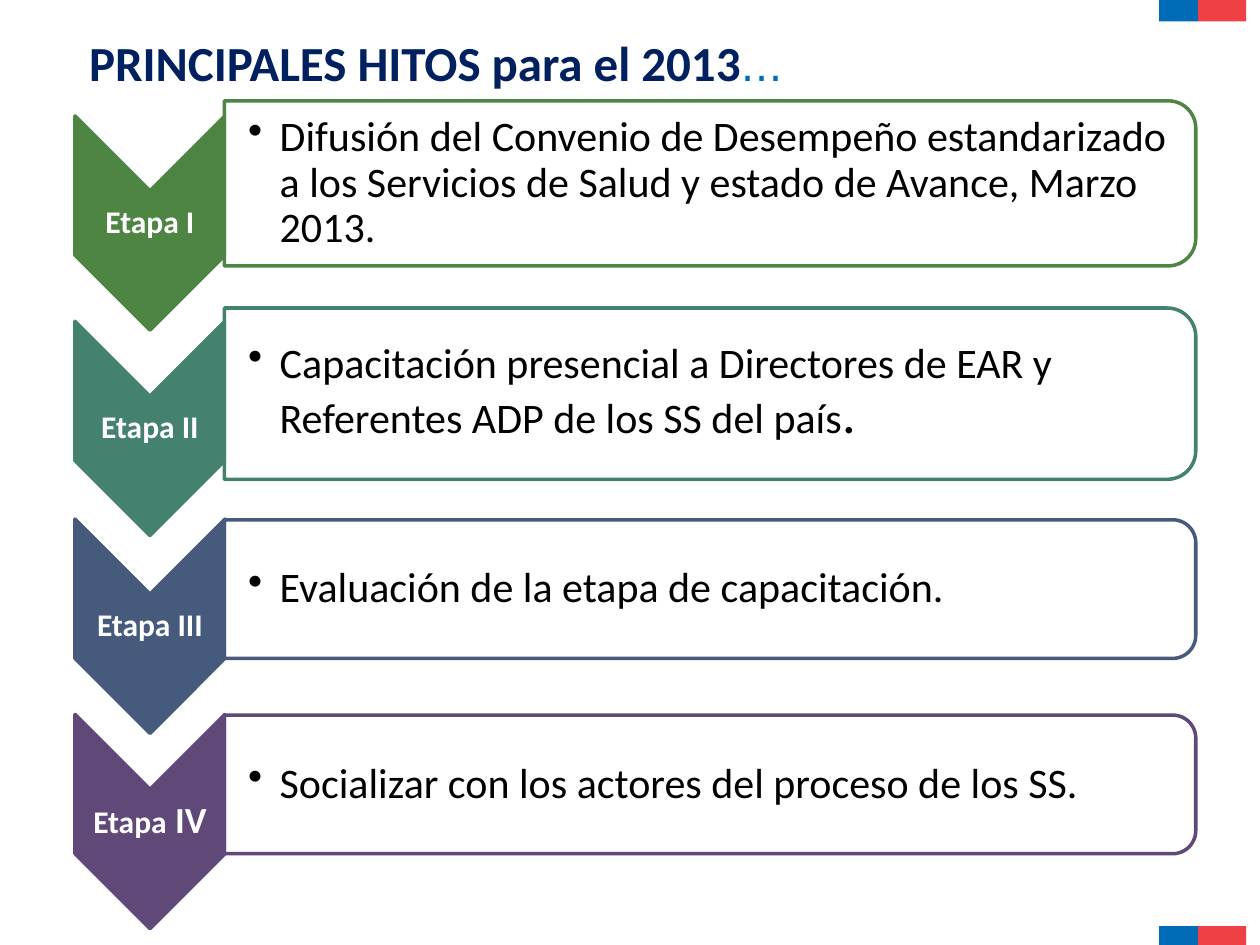
"""Builds the slide of the four main milestones for 2013."""
from dataclasses import dataclass
from typing import NamedTuple

from lxml import etree
from pptx import Presentation
from pptx.dml.color import RGBColor
from pptx.enum.shapes import MSO_SHAPE
from pptx.enum.text import MSO_ANCHOR, PP_ALIGN
from pptx.oxml.ns import qn
from pptx.util import Inches, Pt

RECT = MSO_SHAPE.RECTANGLE
CHEVRON = MSO_SHAPE.CHEVRON
PANEL = MSO_SHAPE.ROUND_2_SAME_RECTANGLE
TOP, MIDDLE = MSO_ANCHOR.TOP, MSO_ANCHOR.MIDDLE
LEFT, CENTER = PP_ALIGN.LEFT, PP_ALIGN.CENTER
SLIDE_W, SLIDE_H = Inches(10), Inches(7.5)


@dataclass(frozen=True)
class Theme:
    """Colours, fonts and type sizes of the slide."""
    white: str = "FFFFFF"
    black: str = "000000"
    navy: str = "002060"
    blue: str = "006CB7"
    red: str = "EF4144"
    stages: tuple[str, ...] = ("4E8542", "44816F", "465B7C", "604878")
    font: str = "Calibri"
    symbol_font: str = "DejaVu Sans"
    title: int = 28
    body: int = 24
    label: int = 18
    numeral: int = 21
    stop: int = 31
    outline: int = 2
    panel_alpha: int = 90


THEME = Theme()


class Box(NamedTuple):
    """A visible area in EMU."""
    x: int
    y: int
    w: int
    h: int


class Span(NamedTuple):
    """A stretch of text in one style."""
    text: str
    size: int
    color: str
    bold: bool = False
    font: str = THEME.font


@dataclass(frozen=True)
class Stage:
    """One milestone, with tops and height in percent of the slide height."""
    label: tuple[Span, ...]
    body: tuple[Span, ...]
    chevron_top: float
    panel_top: float
    panel_height: float


def area(x: float, y: float, w: float, h: float) -> Box:
    """Turn percentages of the slide size into a box."""
    return Box(*(int(share * side / 100) for share, side in
                 zip((x, y, w, h), (SLIDE_W, SLIDE_H) * 2)))


def add_shape(s, kind, box: Box, fill: str, line: str | None = None, turned: bool = False):
    """Draw a preset shape, turned a quarter clockwise on request, to fill a box."""
    x, y, w, h = box
    if turned:
        x, y, w, h = x + (w - h) // 2, y + (h - w) // 2, h, w
    sp = s.shapes.add_shape(kind, x, y, w, h)
    sp.rotation = 90 if turned else 0
    sp.shadow.inherit = False
    sp.fill.solid()
    sp.fill.fore_color.rgb = RGBColor.from_string(fill)
    if line:
        sp.line.color.rgb = RGBColor.from_string(line)
        sp.line.width = Pt(THEME.outline)
    else:
        sp.line.fill.background()
    return sp


def add_text(s, box: Box, spans: tuple[Span, ...], margins: tuple[float, ...],
             anchor=MIDDLE, align=LEFT, spacing: float = 0.9):
    """Write one paragraph of styled spans in a text box."""
    tf = s.shapes.add_textbox(*box).text_frame
    tf.word_wrap = True
    tf.vertical_anchor = anchor
    tf.margin_left, tf.margin_top, tf.margin_right, tf.margin_bottom = map(Inches, margins)
    p = tf.paragraphs[0]
    p.alignment = align
    p.line_spacing = spacing
    for span in spans:
        r = p.add_run()
        r.text = span.text
        r.font.size = Pt(span.size)
        r.font.name = span.font
        r.font.bold = span.bold
        r.font.color.rgb = RGBColor.from_string(span.color)
    return p


def add_bullet(p, indent: float) -> None:
    """Give a paragraph a round bullet with a hanging indent."""
    pPr = p._p.get_or_add_pPr()
    pPr.set("marL", str(Inches(indent)))
    pPr.set("indent", str(-Inches(indent)))
    etree.SubElement(pPr, qn("a:buChar")).set("char", "•")


def set_alpha(sp, percent: int) -> None:
    """Set the opacity of a solid fill."""
    color = sp._element.spPr.find(qn("a:solidFill"))[0]
    etree.SubElement(color, qn("a:alpha")).set("val", str(percent * 1000))


def add_flag(s, top: float) -> None:
    """Draw the blue and red band at the right edge."""
    add_shape(s, RECT, area(92, top, 3.1, 2.27), THEME.blue)
    add_shape(s, RECT, area(95.1, top, 3.8, 2.27), THEME.red)


def add_stage(s, stage: Stage, color: str) -> None:
    """Draw a chevron with its label and the panel beside it."""
    chevron = area(5.95, stage.chevron_top, 11.9, 22.67)
    add_shape(s, CHEVRON, chevron, color, color, turned=True)
    notch = chevron.w // 2
    label = Box(chevron.x, chevron.y + notch, chevron.w, chevron.h - 2 * notch)
    add_text(s, label, stage.label, (0.01,) * 4, align=CENTER)

    panel = area(17.8, stage.panel_top, 77.1, stage.panel_height)
    set_alpha(add_shape(s, PANEL, panel, THEME.white, color, turned=True), THEME.panel_alpha)
    pad = panel.h // 20
    inner = Box(panel.x, panel.y + pad, panel.w - pad, panel.h - 2 * pad)
    add_bullet(add_text(s, inner, stage.body, (0.19, 0.02, 0.02, 0.02)), 0.25)


def label(text: str, size: int = THEME.label) -> Span:
    """Style a chevron label."""
    return Span(text, size, THEME.white, True)


def body(text: str, size: int = THEME.body) -> Span:
    """Style a panel text."""
    return Span(text, size, THEME.black)


STAGES = (
    Stage((label("Etapa I"),),
          (body("Difusión del Convenio de Desempeño estandarizado a los Servicios de Salud "
                "y estado de Avance, Marzo 2013."),), 12.27, 10.67, 17.47),
    Stage((label("Etapa II"),),
          (body("Capacitación presencial a Directores de EAR y Referentes ADP de los SS del país"),
           body(".", THEME.stop)), 34.0, 32.6, 18.13),
    Stage((label("Etapa III"),),
          (body("Evaluación de la etapa de capacitación."),), 54.93, 55.0, 14.67),
    Stage((label("Etapa"), label(" IV", THEME.numeral)),
          (body("Socializar con los actores del proceso de los SS."),), 75.6, 75.67, 14.67),
)
TITLE = (Span("PRINCIPALES HITOS para el 2013", THEME.title, THEME.navy, True),
         Span("…", THEME.body, THEME.blue, font=THEME.symbol_font))


def main() -> None:
    """Build and save the slide."""
    prs = Presentation()
    prs.slide_width, prs.slide_height = SLIDE_W, SLIDE_H
    s = prs.slides.add_slide(prs.slide_layouts[6])
    for top in (0, 98):
        add_flag(s, top)
    for stage, color in zip(STAGES, THEME.stages):
        add_stage(s, stage, color)
    add_text(s, area(6.1, 2.8, 62.6, 7.6), TITLE, (0.1, 0.05, 0.1, 0.05), TOP, spacing=1.0)
    prs.save("out.pptx")


if __name__ == "__main__":
    main()
